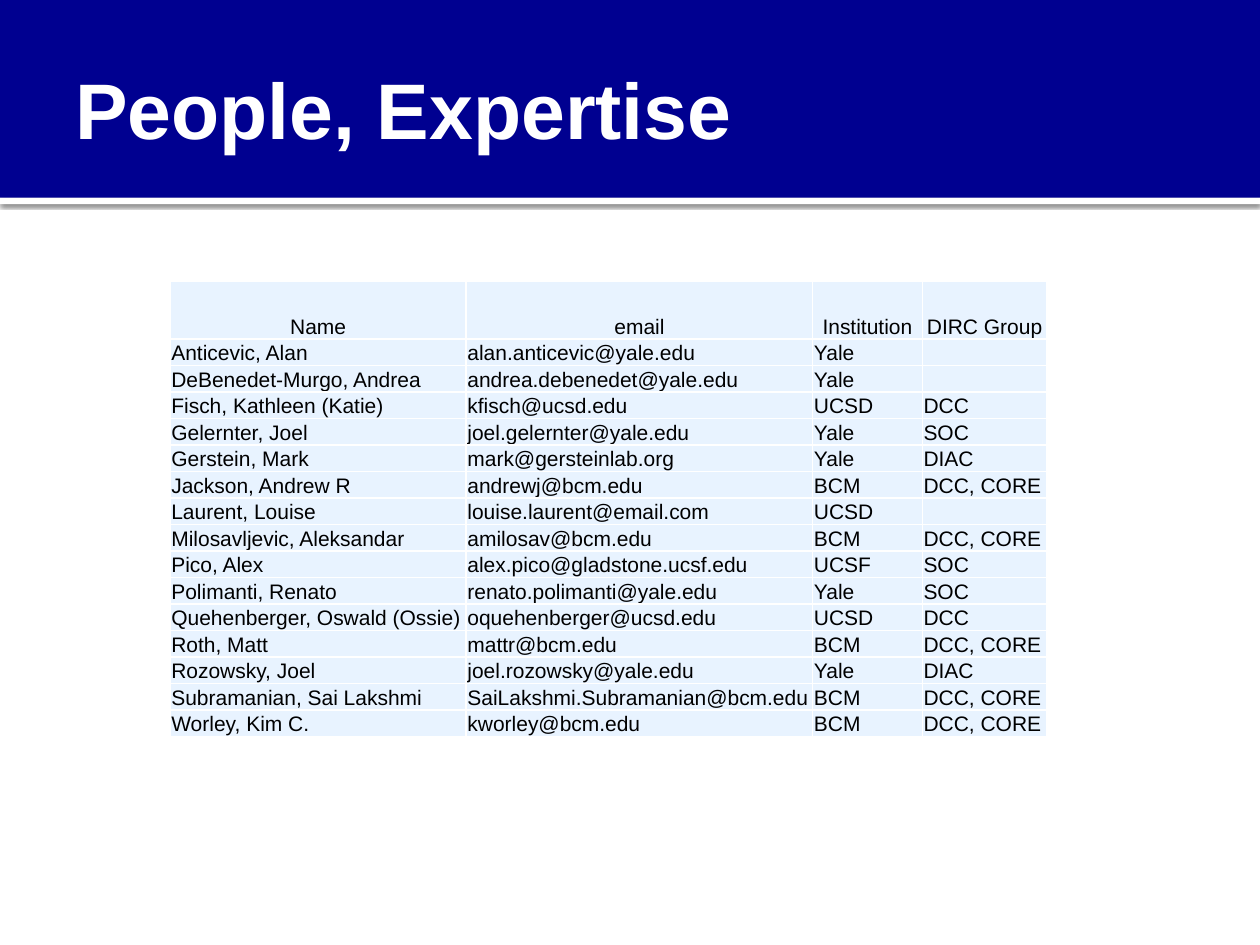
"""Build the People, Expertise slide with its contact table."""
from dataclasses import dataclass

import lxml.etree
import pptx
import pptx.dml.color
import pptx.enum.shapes
import pptx.enum.text
import pptx.oxml
import pptx.oxml.ns
import pptx.util

Inches = pptx.util.Inches
Pt = pptx.util.Pt
qn = pptx.oxml.ns.qn


@dataclass(frozen=True)
class Theme:
    """Colours, font and type sizes of the slide."""
    navy: str = "000090"
    white: str = "FFFFFF"
    pale_blue: str = "E8F3FF"
    black: str = "000000"
    font: str = "Arial"
    title_size: int = 45
    table_size: int = 12


THEME = Theme()
HEADINGS = ("Name", "email", "Institution", "DIRC Group")
PEOPLE = (
    ("Anticevic, Alan", "alan.anticevic@yale.edu", "Yale", ""),
    ("DeBenedet-Murgo, Andrea", "andrea.debenedet@yale.edu", "Yale", ""),
    ("Fisch, Kathleen (Katie)", "kfisch@ucsd.edu", "UCSD", "DCC"),
    ("Gelernter, Joel", "joel.gelernter@yale.edu", "Yale", "SOC"),
    ("Gerstein, Mark", "mark@gersteinlab.org", "Yale", "DIAC"),
    ("Jackson, Andrew R", "andrewj@bcm.edu", "BCM", "DCC, CORE"),
    ("Laurent, Louise", "louise.laurent@email.com", "UCSD", ""),
    ("Milosavljevic, Aleksandar", "amilosav@bcm.edu", "BCM", "DCC, CORE"),
    ("Pico, Alex", "alex.pico@gladstone.ucsf.edu", "UCSF", "SOC"),
    ("Polimanti, Renato", "renato.polimanti@yale.edu", "Yale", "SOC"),
    ("Quehenberger, Oswald (Ossie)", "oquehenberger@ucsd.edu", "UCSD", "DCC"),
    ("Roth, Matt", "mattr@bcm.edu", "BCM", "DCC, CORE"),
    ("Rozowsky, Joel", "joel.rozowsky@yale.edu", "Yale", "DIAC"),
    ("Subramanian, Sai Lakshmi", "SaiLakshmi.Subramanian@bcm.edu", "BCM", "DCC, CORE"),
    ("Worley, Kim C.", "kworley@bcm.edu", "BCM", "DCC, CORE"),
)
COLUMN_WIDTHS = (2.35, 2.75, 0.87, 0.99)
HEADING_HEIGHT = 0.46
PERSON_HEIGHT = 0.21


def rgb(colour):
    """Turn a hex string into a colour."""
    return pptx.dml.color.RGBColor.from_string(colour)


def add_band(slide, top, height, colour):
    """Add a full-width plain band."""
    band = slide.shapes.add_shape(
        pptx.enum.shapes.MSO_SHAPE.RECTANGLE,
        Inches(0), Inches(top), Inches(10), Inches(height))
    band.shadow.inherit = False
    band.fill.solid()
    band.fill.fore_color.rgb = rgb(colour)
    band.line.fill.background()
    return band


def cast_shadow(band):
    """Give a band a soft shadow falling straight down."""
    effects = band._element.spPr.find(qn("a:effectLst"))
    shadow = lxml.etree.SubElement(
        effects, qn("a:outerShdw"), blurRad=str(Pt(2.5)), dist=str(Pt(0.8)),
        dir="5400000", algn="t", rotWithShape="0")
    colour = lxml.etree.SubElement(shadow, qn("a:srgbClr"), val=THEME.black)
    lxml.etree.SubElement(colour, qn("a:alpha"), val="60000")


def style_font(font, size, colour, bold=False):
    """Set the typeface, size, colour and weight."""
    font.name = THEME.font
    font.size = Pt(size)
    font.bold = bold
    font.color.rgb = rgb(colour)


def add_title(slide, wording):
    """Add the slide title over the navy band."""
    title = slide.shapes.add_textbox(Inches(0.5), Inches(0.17), Inches(9), Inches(1.37))
    frame = title.text_frame
    frame.word_wrap = True
    frame.vertical_anchor = pptx.enum.text.MSO_ANCHOR.MIDDLE
    frame.margin_left = Inches(0.1)
    frame.margin_right = frame.margin_top = frame.margin_bottom = Inches(0.05)
    frame.text = wording
    style_font(frame.paragraphs[0].runs[0].font, THEME.title_size, THEME.white, True)


def rule_cell(cell):
    """Draw a white hairline on every side of a cell."""
    properties = cell._tc.get_or_add_tcPr()
    for side in ("lnL", "lnR", "lnT", "lnB"):
        rule = lxml.etree.SubElement(properties, qn(f"a:{side}"), w=str(Pt(1)))
        paint = lxml.etree.SubElement(rule, qn("a:solidFill"))
        lxml.etree.SubElement(paint, qn("a:srgbClr"), val=THEME.white)


def fill_cell(cell, wording, alignment):
    """Write and format one table cell."""
    cell.margin_left = cell.margin_right = cell.margin_top = Inches(0.01)
    cell.margin_bottom = Inches(0)
    cell.vertical_anchor = pptx.enum.text.MSO_ANCHOR.BOTTOM
    rule_cell(cell)
    cell.fill.solid()
    cell.fill.fore_color.rgb = rgb(THEME.pale_blue)
    paragraph = cell.text_frame.paragraphs[0]
    paragraph.alignment = alignment
    if wording:
        paragraph.text = wording
        style_font(paragraph.runs[0].font, THEME.table_size, THEME.black)
    else:
        lxml.etree.SubElement(
            paragraph._p, qn("a:endParaRPr"), sz=str(THEME.table_size * 100))


def add_people_table(slide):
    """Add the table of people, one row each below the headings."""
    entries = (HEADINGS,) + PEOPLE
    heights = [HEADING_HEIGHT] + [PERSON_HEIGHT] * len(PEOPLE)
    people = slide.shapes.add_table(
        len(entries), len(HEADINGS), Inches(1.35), Inches(2.23),
        Inches(sum(COLUMN_WIDTHS)), Inches(sum(heights))).table
    people.first_row = False
    people.horz_banding = False
    for column, width in zip(people.columns, COLUMN_WIDTHS):
        column.width = Inches(width)
    align = pptx.enum.text.PP_ALIGN
    for row, entry, height in zip(people.rows, entries, heights):
        row.height = Inches(height)
        alignment = align.CENTER if entry is HEADINGS else align.LEFT
        for cell, wording in zip(row.cells, entry):
            fill_cell(cell, wording, alignment)


def main():
    """Build and save the slide."""
    deck = pptx.Presentation()
    deck.slide_width = Inches(10)
    deck.slide_height = Inches(7.5)
    slide = deck.slides.add_slide(deck.slide_layouts[6])
    cast_shadow(add_band(slide, 1.57, 0.05, THEME.white))
    add_band(slide, 0, 1.57, THEME.navy)
    add_title(slide, "People, Expertise")
    add_people_table(slide)
    deck.save("out.pptx")


if __name__ == "__main__":
    main()
